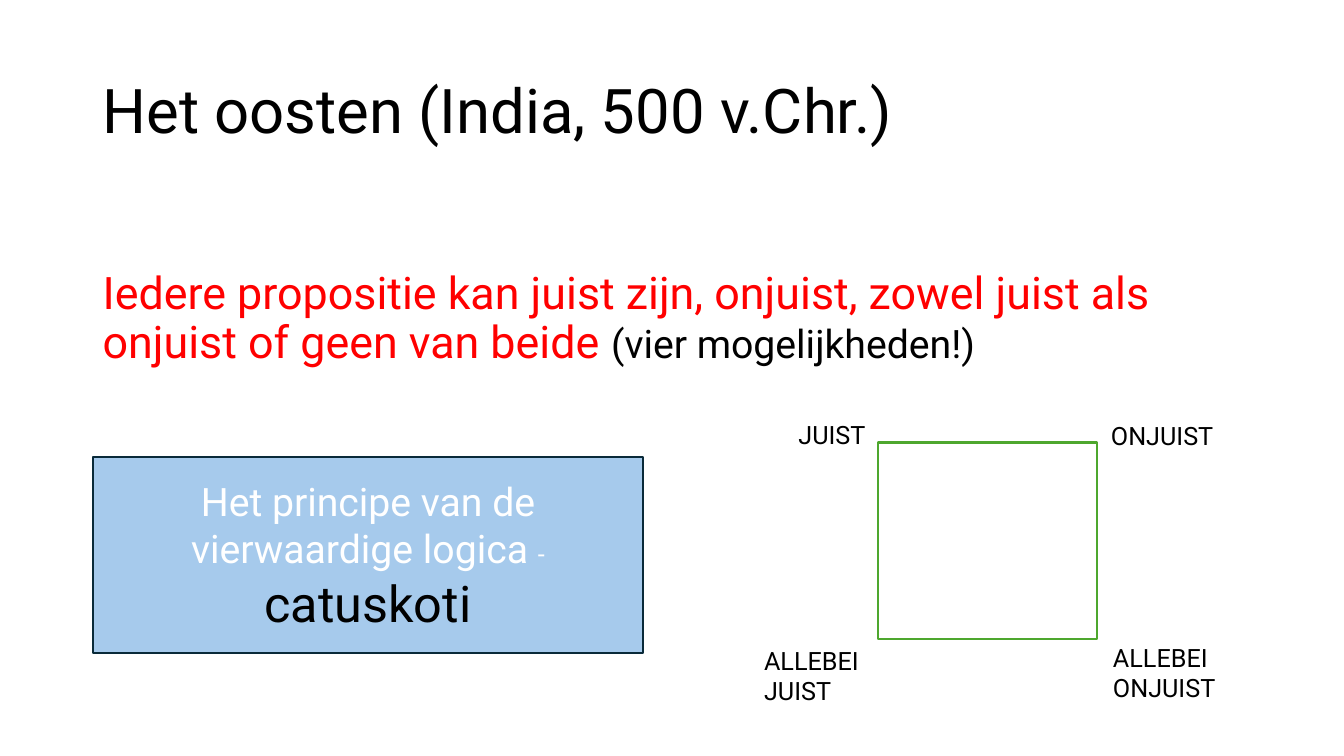
"""Build the slide on the four-valued logic of the East."""
from pptx import Presentation
from pptx.dml.color import RGBColor
from pptx.enum.shapes import MSO_SHAPE as Shape
from pptx.enum.text import MSO_ANCHOR as Anchor, PP_ALIGN as Align
from pptx.util import Inches, Pt

BLACK, WHITE, RED = "000000", "FFFFFF", "FF0000"


def color(hex_code):
    """Turn a hex string into a colour."""
    return RGBColor.from_string(hex_code)


def write(frame, runs, spacing=1.0, align=Align.LEFT, anchor=Anchor.TOP):
    """Fill a text frame with one paragraph of (text, size, colour) runs."""
    frame.word_wrap = True
    frame.vertical_anchor = anchor
    paragraph = frame.paragraphs[0]
    paragraph.alignment = align
    paragraph.line_spacing = spacing
    for text, size, hex_code in runs:
        run = paragraph.add_run()
        run.text = text
        run.font.name = "Roboto"
        run.font.size = Pt(size)
        run.font.color.rgb = color(hex_code)


prs = Presentation()
prs.slide_width, prs.slide_height = Inches(13.33), Inches(7.5)
slide = prs.slides.add_slide(prs.slide_layouts[6])
shapes = slide.shapes

title = shapes.add_textbox(Inches(0.92), Inches(0.4), Inches(11.5), Inches(1.45))
write(title.text_frame, [("Het oosten (India, 500 v.Chr.)", 44, BLACK)],
      spacing=0.9, anchor=Anchor.MIDDLE)

proposition = shapes.add_textbox(Inches(0.92), Inches(2), Inches(11.5), Inches(5.24))
proposition.text_frame.margin_top = Inches(0.69)
write(proposition.text_frame, [
    ("Iedere propositie kan juist zijn, onjuist, zowel juist als onjuist of geen van beide ", 32, RED),
    ("(vier mogelijkheden!)", 28, BLACK),
], spacing=0.9)

boxes = []
for left, top, width, fill, line in [
    (0.92, 4.53, 5.46, "A6CAEC", "092A39"),
    (8.71, 4.39, 2.17, WHITE, "4EA72E"),
]:
    box = shapes.add_shape(Shape.RECTANGLE, Inches(left), Inches(top), Inches(width), Inches(1.95))
    box.shadow.inherit = False
    box.fill.solid()
    box.fill.fore_color.rgb = color(fill)
    box.line.color.rgb = color(line)
    box.line.width = Pt(1.5)
    boxes.append(box)

principle, square = boxes
write(principle.text_frame, [
    ("Het principe van de vierwaardige logica ", 28, WHITE),
    ("- ", 18, WHITE),
    ("catuskoti", 36, BLACK),
], align=Align.CENTER, anchor=Anchor.MIDDLE)

for truth_value, left, top, width, height in [
    ("JUIST", 7.82, 4.11, 1.69, 0.4),
    ("ONJUIST", 10.92, 4.12, 1.69, 0.4),
    ("ALLEBEI JUIST", 7.48, 6.35, 1.4, 0.71),
    ("ALLEBEI ONJUIST", 10.94, 6.32, 1.51, 0.71),
]:
    corner = shapes.add_textbox(Inches(left), Inches(top), Inches(width), Inches(height))
    write(corner.text_frame, [(truth_value, 18, BLACK)])

prs.save("out.pptx")
